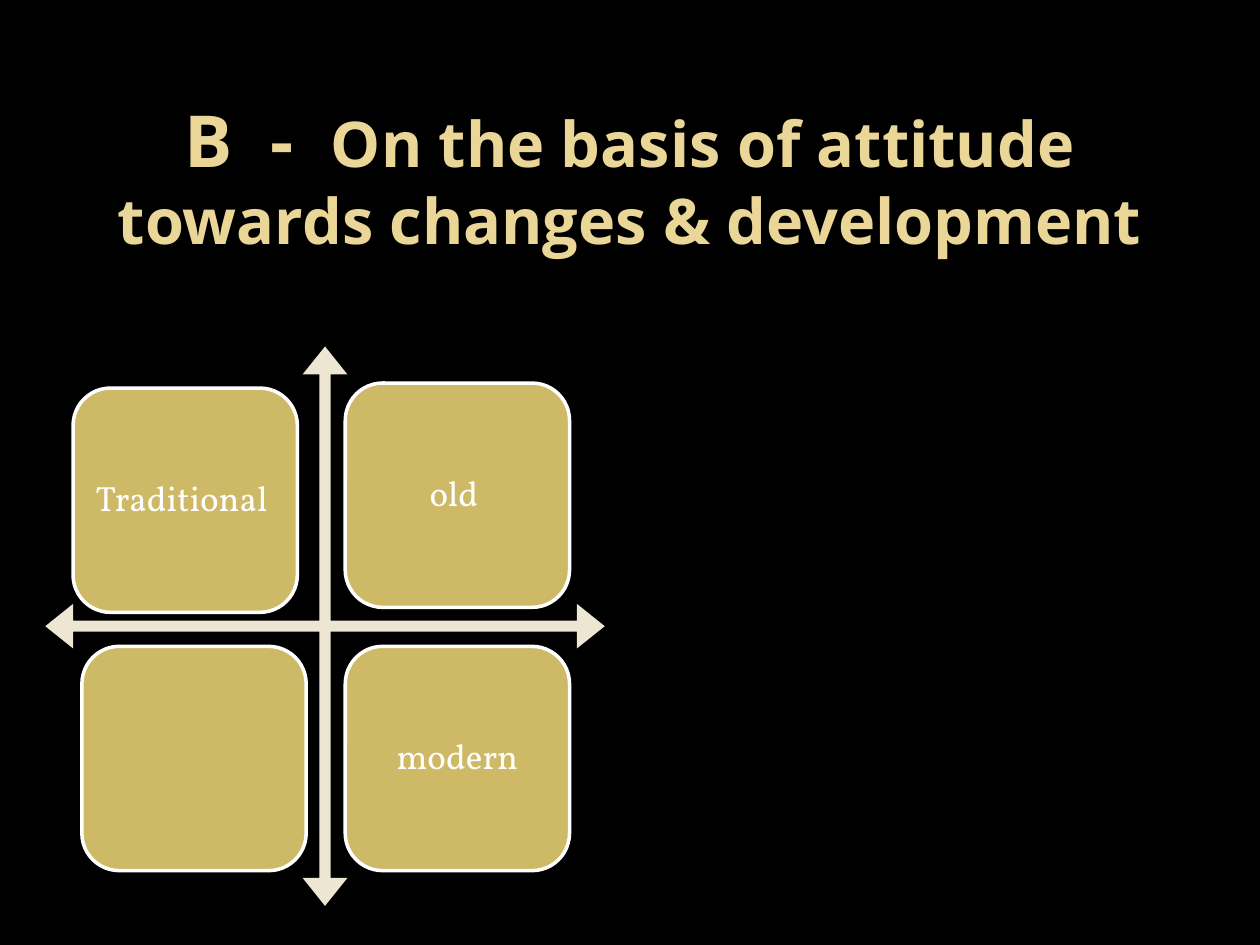
"""Build a slide that sorts attitudes to change on a four-way arrow."""
from dataclasses import dataclass

from pptx import Presentation
from pptx import util as u
from pptx.dml.color import RGBColor
from pptx.enum import shapes, text
from pptx.shapes.autoshape import Shape
from pptx.slide import Slide
from pptx.text.text import TextFrame


@dataclass(frozen=True)
class Theme:
    background: str = "000000"
    heading: str = "EAD696"
    axes: str = "EDE6D3"
    card: str = "CEB966"
    light: str = "FFFFFF"
    heading_font: str = "Open Sans"
    card_font: str = "Vollkorn"
    letter_size: float = 41
    heading_size: float = 36
    card_size: float = 20
    outline: float = 2


@dataclass(frozen=True)
class Card:
    left: float
    top: float
    label: str = ""


THEME = Theme()
CARD_SIDE = 1.78
CARD_INSET = 0.08
RIGHT_COLUMN, BOTTOM_ROW = 2.74, 5.13
CARDS = (
    Card(0.58, 3.08, "Traditional "),
    Card(RIGHT_COLUMN, 3.04, "old "),
    Card(0.65, BOTTOM_ROW),
    Card(RIGHT_COLUMN, BOTTOM_ROW, "modern"),
)
HEADING = (
    ("B  -  ", THEME.letter_size),
    ("On the basis of attitude towards changes & development", THEME.heading_size),
)


def rgb(code: str) -> RGBColor:
    return RGBColor.from_string(code)


def add_line(frame: TextFrame, runs: tuple[tuple[str, float], ...], font: str,
             color: str, bold: bool = False, spacing: float = 1.0) -> None:
    frame.word_wrap = True
    frame.vertical_anchor = text.MSO_ANCHOR.MIDDLE
    line = frame.paragraphs[0]
    line.alignment = text.PP_ALIGN.CENTER
    line.line_spacing = spacing
    for words, size in runs:
        run = line.add_run()
        run.text = words
        run.font.name = font
        run.font.size = u.Pt(size)
        run.font.bold = bold
        run.font.color.rgb = rgb(color)


def add_filled(slide: Slide, kind: shapes.MSO_SHAPE, left: float, top: float,
               side: float, color: str) -> Shape:
    figure = slide.shapes.add_shape(
        kind, u.Inches(left), u.Inches(top), u.Inches(side), u.Inches(side))
    figure.shadow.inherit = False
    figure.fill.solid()
    figure.fill.fore_color.rgb = rgb(color)
    figure.line.fill.background()
    return figure


def add_heading(slide: Slide) -> None:
    heading = slide.shapes.add_textbox(
        u.Inches(0.5), u.Inches(0.3), u.Inches(9), u.Inches(2.2))
    add_line(heading.text_frame, HEADING, THEME.heading_font, THEME.heading, bold=True)


def add_axes(slide: Slide) -> None:
    axes = add_filled(slide, shapes.MSO_SHAPE.QUAD_ARROW, 0.36, 2.75, 4.44, THEME.axes)
    for index, ratio in enumerate((0.02, 0.04, 0.05)):
        axes.adjustments[index] = ratio


def add_card(slide: Slide, card: Card) -> None:
    tile = add_filled(slide, shapes.MSO_SHAPE.ROUNDED_RECTANGLE,
                      card.left, card.top, CARD_SIDE, THEME.card)
    tile.line.color.rgb = rgb(THEME.light)
    tile.line.width = u.Pt(THEME.outline)
    if card.label:
        frame = tile.text_frame
        frame.margin_left = frame.margin_right = u.Inches(CARD_INSET)
        frame.margin_top = frame.margin_bottom = u.Inches(CARD_INSET)
        add_line(frame, ((card.label, THEME.card_size),), THEME.card_font,
                 THEME.light, spacing=0.9)


def main() -> None:
    deck = Presentation()
    deck.slide_width, deck.slide_height = u.Inches(10), u.Inches(7.5)
    slide = deck.slides.add_slide(deck.slide_layouts[6])
    slide.background.fill.solid()
    slide.background.fill.fore_color.rgb = rgb(THEME.background)
    add_heading(slide)
    add_axes(slide)
    for card in CARDS:
        add_card(slide, card)
    deck.save("out.pptx")


if __name__ == "__main__":
    main()
